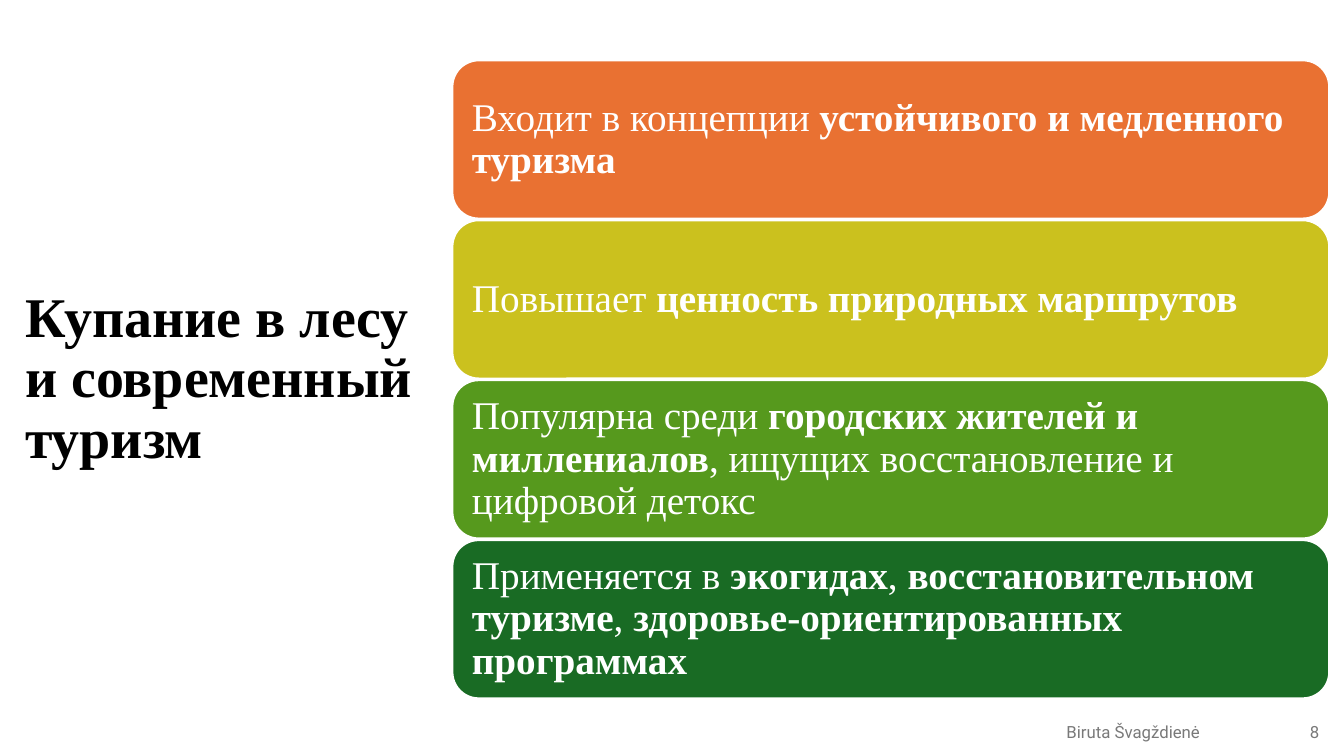
from pptx import Presentation
from pptx.dml.color import RGBColor
from pptx.enum.shapes import MSO_SHAPE
from pptx.enum.text import MSO_ANCHOR, PP_ALIGN
from pptx.util import Cm, Pt

SERIF, SANS = "Times New Roman", "Roboto"

# Each point: card colour and (text, bold) runs.
POINTS = [
    ("E97132", [("Входит в концепции ", False),
                ("устойчивого и медленного туризма", True)]),
    ("CBC11E", [("Повышает ", False),
                ("ценность природных маршрутов", True)]),
    ("56991D", [("Популярна среди ", False),
                ("городских жителей и миллениалов", True),
                (", ищущих восстановление и цифровой детокс", False)]),
    ("196B24", [("Применяется в ", False),
                ("экогидах", True),
                (", ", False),
                ("восстановительном туризме", True),
                (", ", False),
                ("здоровье-ориентированных программах", True)]),
]


def rgb(hex_code):
    return RGBColor.from_string(hex_code)


class SlideBuilder:
    black, white, grey = "000000", "FFFFFF", "797979"

    def __init__(self, slide):
        self.slide = slide

    def add_runs(self, frame, runs, size, font, color,
                 align=PP_ALIGN.LEFT, spacing=1.0):
        """Fill a frame's first paragraph with (text, bold) runs."""
        frame.word_wrap = True
        frame.vertical_anchor = MSO_ANCHOR.MIDDLE
        paragraph = frame.paragraphs[0]
        paragraph.alignment = align
        paragraph.line_spacing = spacing
        for text, bold in runs:
            run = paragraph.add_run()
            run.text = text
            run.font.name = font
            run.font.size = Pt(size)
            run.font.bold = bold
            run.font.color.rgb = rgb(color)

    def title(self, text, left, top, width, height):
        heading = self.slide.shapes.title
        heading.left, heading.top = Cm(left), Cm(top)
        heading.width, heading.height = Cm(width), Cm(height)
        self.add_runs(heading.text_frame, [(text, True)], 40, SERIF,
                      self.black, spacing=0.9)

    def card(self, runs, color, left, top, width, height):
        card = self.slide.shapes.add_shape(
            MSO_SHAPE.ROUNDED_RECTANGLE,
            Cm(left), Cm(top), Cm(width), Cm(height))
        card.shadow.inherit = False
        card.fill.solid()
        card.fill.fore_color.rgb = rgb(color)
        card.line.color.rgb = rgb(self.white)
        card.line.width = Pt(1.5)
        frame = card.text_frame
        frame.margin_left = frame.margin_right = Cm(0.3)
        frame.margin_top = frame.margin_bottom = Cm(0.3)
        self.add_runs(frame, runs, 28, SERIF, self.white, spacing=0.9)

    def footer(self, text, left, width, align):
        box = self.slide.shapes.add_textbox(
            Cm(left), Cm(17.93), Cm(width), Cm(1.02))
        self.add_runs(box.text_frame, [(text, False)], 12, SANS,
                      self.grey, align)


def main():
    deck = Presentation()
    deck.slide_width, deck.slide_height = Cm(33.87), Cm(19.05)
    title_only = deck.slide_layouts[5]
    builder = SlideBuilder(deck.slides.add_slide(title_only))

    builder.title("Купание в лесу и современный туризм",
                  0.38, 1.52, 11.02, 16.08)
    builder.footer("Biruta Švagždienė", 24.66, 7.8, PP_ALIGN.CENTER)
    builder.footer("8", 32.31, 1.19, PP_ALIGN.RIGHT)

    first_top, card_height, pitch = 1.52, 3.99, 4.03
    for row, (color, runs) in enumerate(POINTS):
        builder.card(runs, color, 11.4, first_top + row * pitch,
                     22.1, card_height)

    deck.save("out.pptx")


if __name__ == "__main__":
    main()
